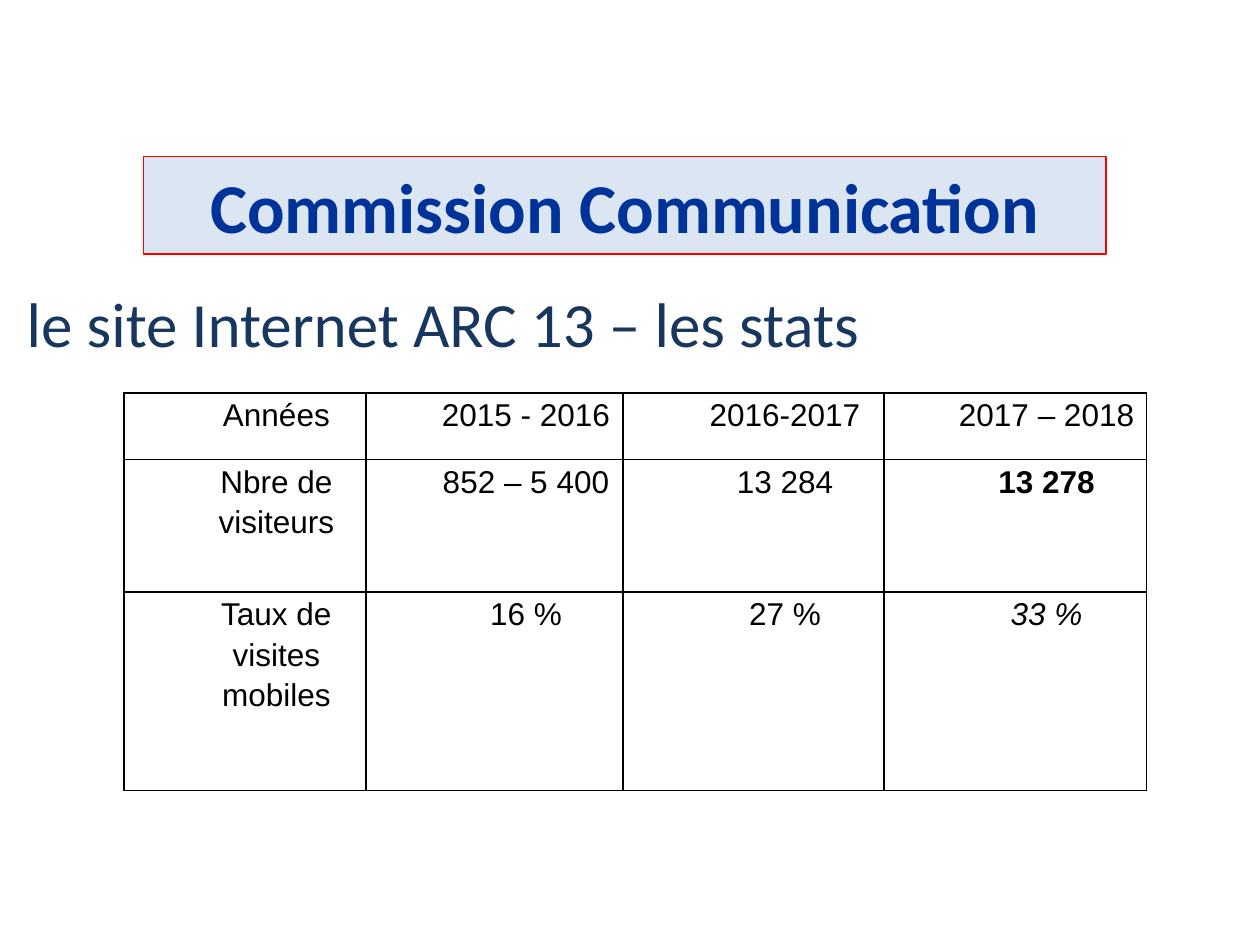
"""Build the slide with the visitor figures of the ARC 13 site."""
import pptx
import pptx.dml.color
import pptx.enum.shapes
import pptx.enum.text
import pptx.oxml
import pptx.oxml.ns
import pptx.util

Pt = pptx.util.Pt
MID = pptx.enum.text.PP_ALIGN.CENTER

TITLE = "Commission Communication"
HEAD = "le site Internet ARC 13 – les stats"
ROWS = [
    ("Années", "2015 - 2016", "2016-2017", "2017 – 2018"),
    ("Nbre de visiteurs", "852 – 5 400", "13 284", "13 278"),
    ("Taux de visites mobiles", "16 %", "27 %", "33 %"),
]
BOLD, SLANT = "13 278", "33 %"
WIDE = [138.25, 147, 149, 150]
HIGH = [37.9, 75.7, 113.6]


def tint(text):
    return pptx.dml.color.RGBColor.from_string(text)


def style(para, name, size, color, bold=False, slant=False):
    font = para.font
    font.name, font.size = name, Pt(size)
    font.bold, font.italic = bold, slant
    font.color.rgb = tint(color)


def edge(cell):
    props = cell._tc.get_or_add_tcPr()
    for side in "LRTB":
        props.append(pptx.oxml.parse_xml(
            f'<a:ln{side} {pptx.oxml.ns.nsdecls("a")} w="12700"><a:solidFill>'
            f'<a:srgbClr val="000000"/></a:solidFill></a:ln{side}>'))
    cell.fill.background()


def add_head(slide):
    frame = slide.shapes.add_textbox(Pt(0), Pt(158), Pt(513), Pt(52)).text_frame
    frame.word_wrap = True
    frame.margin_left = Pt(15.3)
    frame.vertical_anchor = pptx.enum.text.MSO_ANCHOR.MIDDLE
    para = frame.paragraphs[0]
    para.text = HEAD
    style(para, "Calibri", 36, "17375E")


def add_title(slide):
    kind = pptx.enum.shapes.MSO_SHAPE.RECTANGLE
    box = slide.shapes.add_shape(kind, Pt(82), Pt(89.5), Pt(550), Pt(55.7))
    box.shadow.inherit = False
    box.fill.solid()
    box.fill.fore_color.rgb = tint("DCE6F2")
    box.line.color.rgb = tint("FF0000")
    box.line.width = Pt(0.75)
    para = box.text_frame.paragraphs[0]
    para.text, para.alignment = TITLE, MID
    style(para, "Calibri", 40, "003399", bold=True)


def add_stats(slide):
    table = slide.shapes.add_table(
        len(ROWS), len(WIDE), Pt(70.8), Pt(224.6), Pt(sum(WIDE)), Pt(sum(HIGH))).table
    table.first_row = table.horz_banding = False
    for col, width in zip(table.columns, WIDE):
        col.width = Pt(width)
    for row, height, texts in zip(table.rows, HIGH, ROWS):
        row.height = Pt(height)
        for cell, text in zip(row.cells, texts):
            edge(cell)
            cell.margin_left = cell.margin_right = Pt(5)
            cell.margin_top = cell.margin_bottom = Pt(0)
            para = cell.text_frame.paragraphs[0]
            para.text, para.alignment = text, MID
            para.line_spacing, para.space_after = 1.15, Pt(6)
            para._p.get_or_add_pPr().set("marL", str(Pt(36)))
            style(para, "Arial", 18, "000000", text == BOLD, text == SLANT)


def main():
    deck = pptx.Presentation()
    deck.slide_width, deck.slide_height = Pt(720), Pt(540)
    slide = deck.slides.add_slide(deck.slide_layouts[6])
    add_head(slide)
    add_title(slide)
    add_stats(slide)
    deck.save("out.pptx")


if __name__ == "__main__":
    main()
